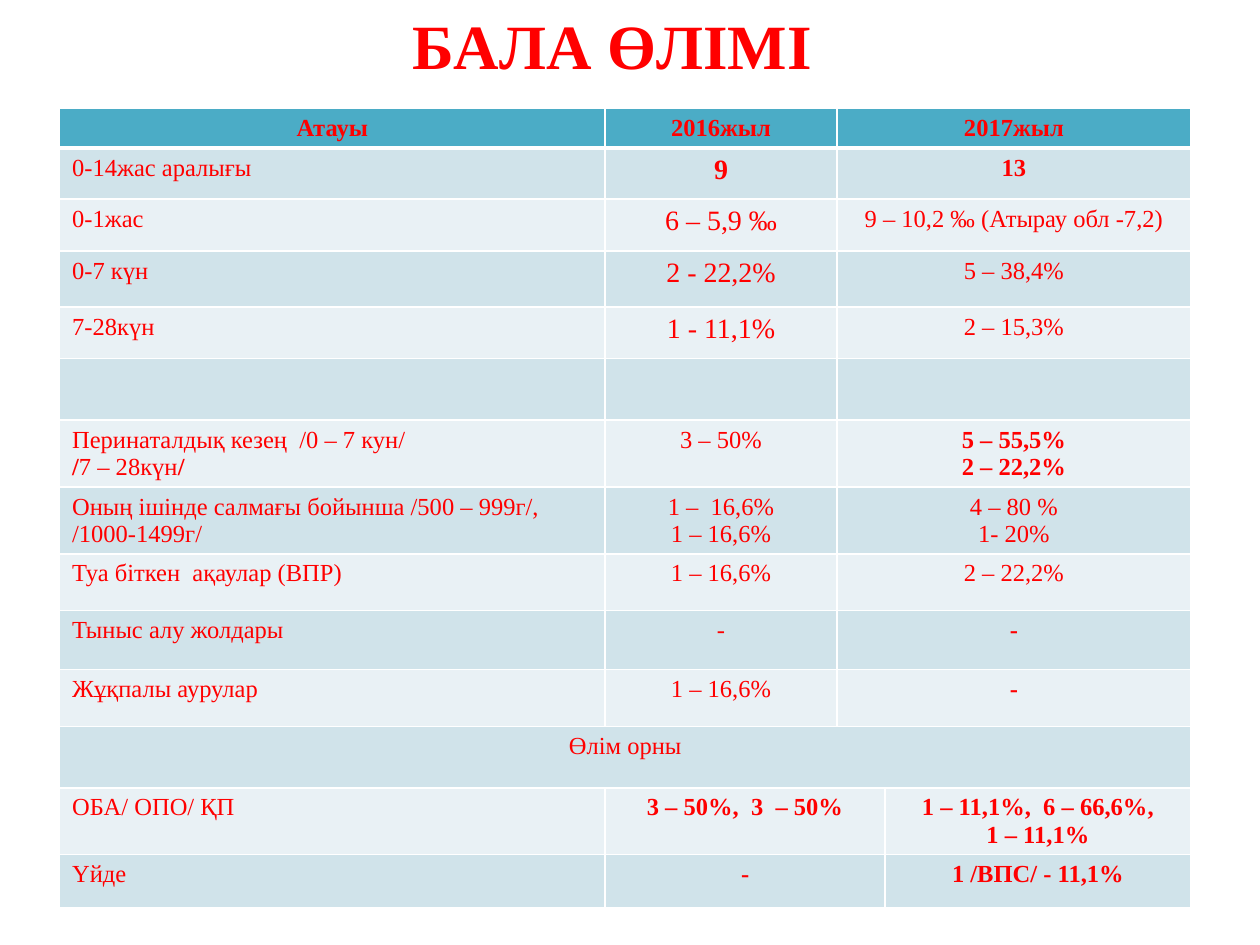
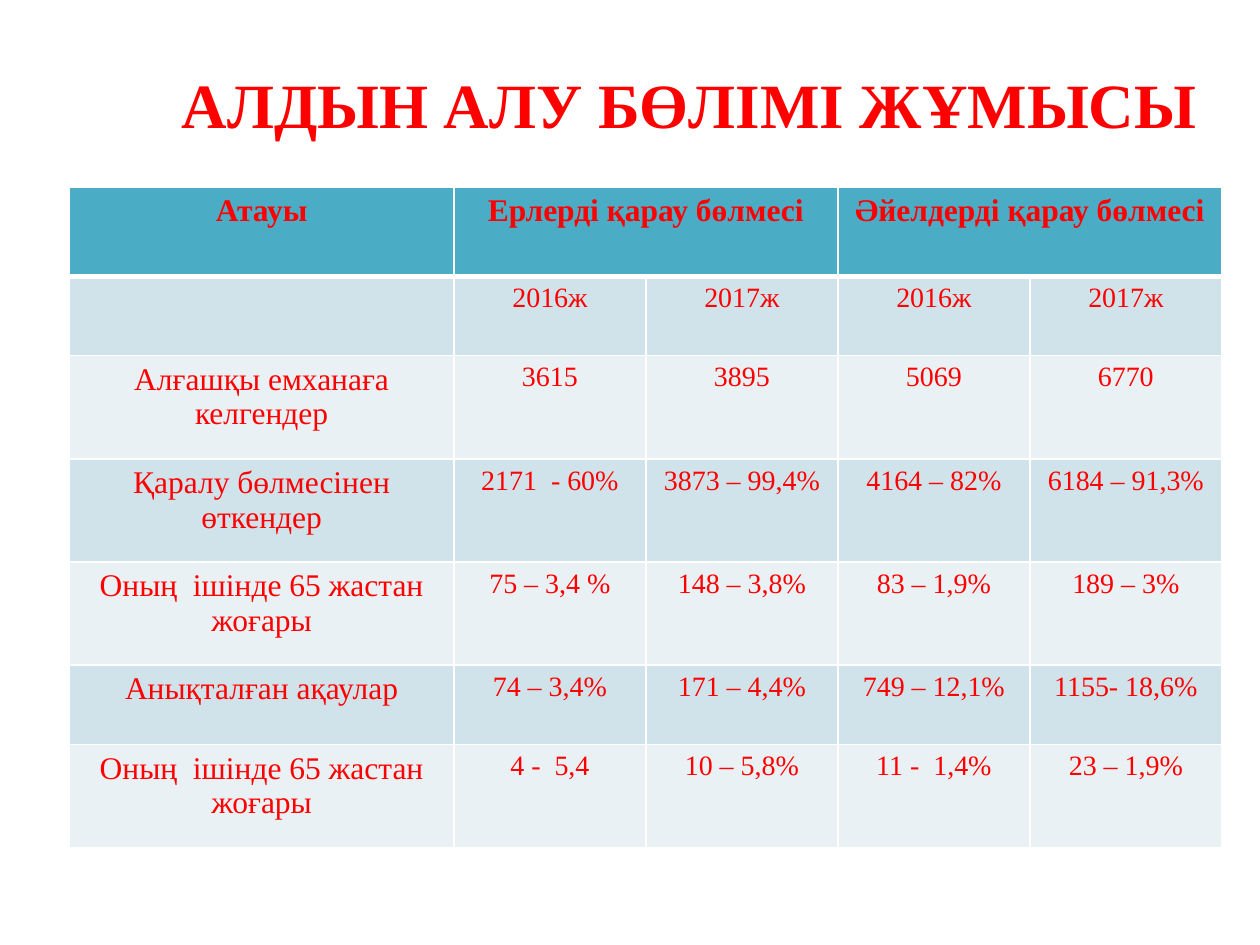
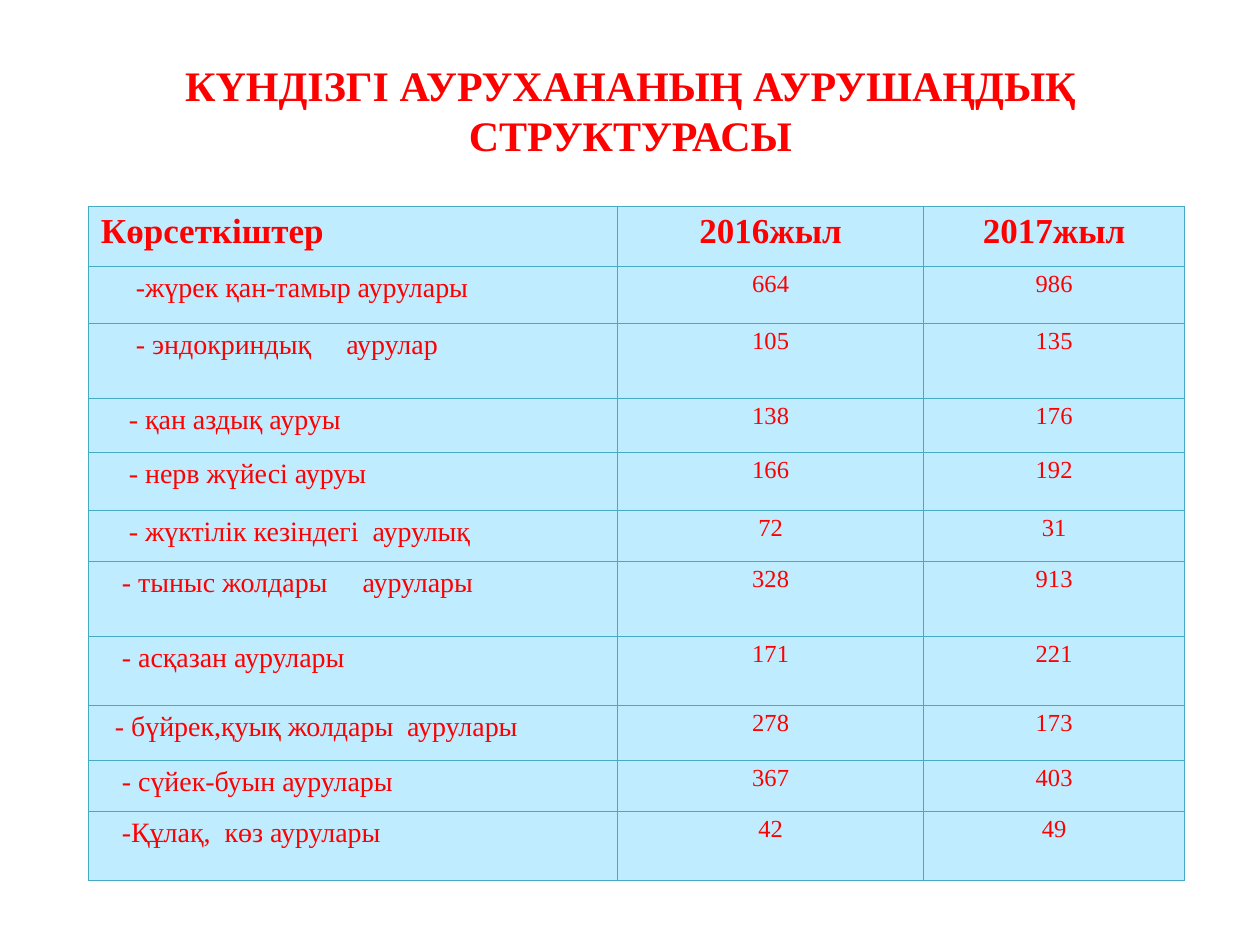
"""Build three slides of hospital statistics, each a title over a table."""
from itertools import product

from lxml.etree import SubElement
from pptx import Presentation
from pptx.dml.color import RGBColor
from pptx.enum.text import MSO_ANCHOR, MSO_AUTO_SIZE, PP_ALIGN
from pptx.oxml.ns import qn
from pptx.util import Cm, Pt

THEME = {
    "font": "Times New Roman", "text": "FF0000",
    "white": {"header": "4BACC6", "bands": ("D0E3EA", "E9F1F5"),
              "line": "FFFFFF", "width": 1, "header_width": 3},
    "sky": {"header": "C0ECFF", "bands": ("C0ECFF", "C0ECFF"),
            "line": "46AAC5", "width": 0.75, "header_width": 0.75},
    "title": {"large": 36, "small": 24},
    "space": 0.25, "wide_gap": 16,
}

MORTALITY = [
    ["*Атауы*", "*2016жыл*", "*2017жыл*", None],
    ["0-14жас аралығы", "*9*", "*13*", None],
    ["0-1жас", "6 – 5,9 ‰", "9 – 10,2 ‰ (Атырау обл -7,2)", None],
    ["0-7 күн", "2 - 22,2%", "5 – 38,4%", None],
    ["7-28күн", "1 - 11,1%", "2 – 15,3%", None],
    ["", "", "", None],
    ["Перинаталдық кезең  /0 – 7 кун/\n*/*7 – 28күн*/*", "3 – 50%",
     "*5 – 55,5%*\n*2 – 22,2%*", None],
    ["Оның ішінде салмағы бойынша /500 – 999г/,\n/1000-1499г/",
     "1 –  16,6%\n1 – 16,6%", "4 – 80 %\n1- 20%", None],
    ["Туа біткен  ақаулар (ВПР)", "1 – 16,6%", "2 – 22,2%", None],
    ["Тыныс алу жолдары", "-", "*-*", None],
    ["Жұқпалы аурулар", "1 – 16,6%", "*-*", None],
    ["Өлім орны", None, None, None],
    ["ОБА/ ОПО/ ҚП", "*3 – 50%,  3  – 50%*", None,
     "*1 – 11,1%,  6 – 66,6%,*\n*1 – 11,1%*"],
    ["Үйде", "*-*", None, "*1 /ВПС/ - 11,1%*"],
]
PREVENTION = [
    ["*Атауы*", "*Ерлерді қарау бөлмесі*", None, "*Әйелдерді қарау бөлмесі*", None],
    ["", "2016ж", "2017ж", "2016ж", "2017ж"],
    ["Алғашқы емханаға келгендер", "3615", "3895", "5069", "6770"],
    ["Қаралу бөлмесінен өткендер", "2171  - 60%", "3873 – 99,4%", "4164 – 82%",
     "6184 – 91,3%"],
    ["Оның  ішінде 65 жастан жоғары", "75 – 3,4 %", "148 – 3,8%", "83 – 1,9%",
     "189 – 3%"],
    ["Анықталған ақаулар", "74 – 3,4%", "171 – 4,4%", "749 – 12,1%", "1155- 18,6%"],
    ["Оның  ішінде 65 жастан жоғары", "4 -  5,4", "10 – 5,8%", "11 -  1,4%",
     "23 – 1,9%"],
]
DAY_HOSPITAL = [
    ["*Көрсеткіштер*", "*2016жыл*", "*2017жыл*"],
    ["-жүрек қан-тамыр аурулары", "664", "986"],
    ["- эндокриндық\tаурулар", "105", "135"],
    ["- қан аздық ауруы", "138", "176"],
    ["- нерв жүйесі ауруы", "166", "192"],
    ["- жүктілік кезіндегі  аурулық", "72", "31"],
    ["- тыныс жолдары\tаурулары", "328", "913"],
    ["- асқазан аурулары", "171", "221"],
    ["- бүйрек,қуық жолдары  аурулары", "278", "173"],
    ["- сүйек-буын аурулары", "367", "403"],
    ["-Құлақ,  көз аурулары", "42", "49"],
]

SLIDES = [
    {"title": "БАЛА ӨЛІМІ", "title_size": "large", "title_box": (5.36, 0, 13.97, 1.8),
     "rows": MORTALITY, "at": (1.2, 2.18), "look": "white",
     "cols": [11, 4.67, 0.97, 6.17],
     "heights": [0.79, 1.03, 1.05, 1.13, 1.04, 1.24, 1.34, 1.34, 1.14, 1.19,
                 1.15, 1.24, 1.34, 1.06],
     "size": lambda r, c: 16 if c == 1 and 1 <= r <= 4 else 14,
     "left": lambda r, c: c == 0 and r not in (0, 11)},
    {"title": "АЛДЫН АЛУ БӨЛІМІ ЖҰМЫСЫ", "title_size": "large",
     "title_box": (3.38, 1.19, 21.03, 1.8),
     "rows": PREVENTION, "at": (1.4, 3.77), "look": "white",
     "cols": [7.75] + [3.87] * 4,
     "heights": [1.8, 1.6, 2.08, 2.08, 2.08, 1.6, 2.08],
     "size": lambda r, c: 18 if r == 0 or c == 0 else 16,
     "left": lambda r, c: False},
    {"title": "КҮНДІЗГІ АУРУХАНАНЫҢ АУРУШАҢДЫҚ СТРУКТУРАСЫ", "title_size": "small",
     "title_box": (0.43, 1.07, 24.56, 2.31),
     "rows": DAY_HOSPITAL, "at": (1.78, 4.16), "look": "sky",
     "cols": [10.67, 6.17, 5.26],
     "heights": [1.21, 1.15, 1.51, 1.09, 1.17, 1.03, 1.51, 1.39, 1.11, 1.03, 1.39],
     "size": lambda r, c: 20 if r == 0 else 16 if c == 0 else 14,
     "left": lambda r, c: c == 0,
     "indents": [0, 5, 5, 4, 4, 4, 3, 3, 2, 3, 3],
     "numbers": {"margin_left": Cm(0.18), "margin_right": Cm(0.18),
                 "margin_top": 0, "margin_bottom": 0},
     "number_spacing": 1.15},
]


def apply(obj, values):
    for name, value in values.items():
        setattr(obj, name, value)


def add_run(p, text, size, bold):
    r = p.add_run()
    r.text = text
    apply(r.font, {"name": THEME["font"], "size": Pt(size), "bold": bold})
    r.font.color.rgb = RGBColor.from_string(THEME["text"])
    return r


def write_line(p, line, size):
    for i, part in enumerate(line.split("*")):
        for j, words in enumerate(part.split("\t")):
            if j:
                gap = add_run(p, " ", size, False)
                gap.font._element.set("spc", str(THEME["wide_gap"] * 100))
            if words:
                add_run(p, words, size, i % 2 == 1)


def draw_borders(cell, color, widths):
    tc_pr = cell._tc.get_or_add_tcPr()
    for side, width in widths.items():
        ln = SubElement(tc_pr, qn(f"a:ln{side}"), w=str(Pt(width)))
        fill = SubElement(ln, qn("a:solidFill"))
        SubElement(fill, qn("a:srgbClr"), val=color)


def style_cell(cell, row, look):
    widths = dict.fromkeys("LRTB", look["width"])
    if row < 2:
        widths["T" if row else "B"] = look["header_width"]
    draw_borders(cell, look["line"], widths)
    cell.fill.solid()
    color = look["bands"][(row - 1) % 2] if row else look["header"]
    cell.fill.fore_color.rgb = RGBColor.from_string(color)


def fill_cell(cell, text, row, col, data):
    size = data["size"](row, col)
    is_number = "numbers" in data and row > 0 and col > 0
    if is_number:
        apply(cell, data["numbers"])
    for i, line in enumerate(text.split("\n")):
        p = cell.text_frame.add_paragraph() if i else cell.text_frame.paragraphs[0]
        p.alignment = PP_ALIGN.LEFT if data["left"](row, col) else PP_ALIGN.CENTER
        if is_number:
            p.line_spacing = data["number_spacing"]
        if "indents" in data and col == 0:
            indent = Pt(data["indents"][row] * THEME["space"] * size)
            p._p.get_or_add_pPr().set("marL", str(indent))
        write_line(p, line, size)


def add_title(s, data):
    sp = s.shapes.title
    apply(sp, dict(zip(("left", "top", "width", "height"), map(Cm, data["title_box"]))))
    tf = sp.text_frame
    apply(tf, {"word_wrap": True, "auto_size": MSO_AUTO_SIZE.NONE,
               "vertical_anchor": MSO_ANCHOR.TOP,
               "margin_left": Cm(0.1), "margin_right": Cm(0.1)})
    p = tf.paragraphs[0]
    p.alignment = PP_ALIGN.CENTER
    add_run(p, data["title"], THEME["title"][data["title_size"]], True)


def add_grid(s, data):
    rows, cols, heights = data["rows"], data["cols"], data["heights"]
    table = s.shapes.add_table(len(rows), len(cols), *map(Cm, data["at"]),
                               Cm(sum(cols)), Cm(sum(heights))).table
    for column, width in zip(table.columns, cols):
        column.width = Cm(width)
    for table_row, height in zip(table.rows, heights):
        table_row.height = Cm(height)
    for row, col in product(range(len(rows)), range(len(cols))):
        cell, text = table.cell(row, col), rows[row][col]
        style_cell(cell, row, THEME[data["look"]])
        if text is None:
            continue
        end = col + 1
        while end < len(cols) and rows[row][end] is None:
            end += 1
        if end > col + 1:
            cell.merge(table.cell(row, end - 1))
        fill_cell(cell, text, row, col, data)


def main():
    prs = Presentation()
    apply(prs, {"slide_width": Cm(25.4), "slide_height": Cm(19.05)})
    for data in SLIDES:
        s = prs.slides.add_slide(prs.slide_layouts.get_by_name("Title Only"))
        add_title(s, data)
        add_grid(s, data)
    prs.save("out.pptx")


if __name__ == "__main__":
    main()
